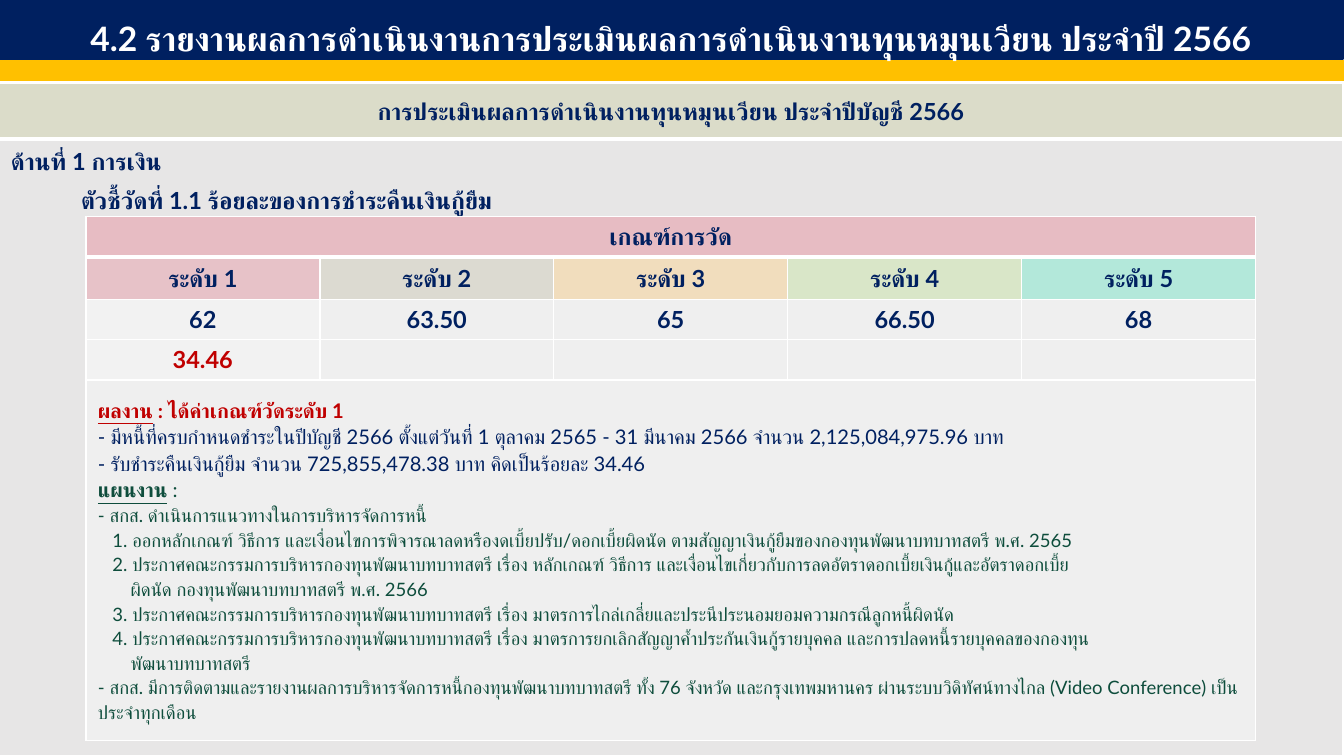
from dataclasses import dataclass

from lxml.etree import SubElement
from pptx import Presentation
from pptx.dml.color import RGBColor
from pptx.enum.shapes import MSO_SHAPE
from pptx.enum.text import MSO_ANCHOR, PP_ALIGN
from pptx.oxml.ns import qn
from pptx.util import Inches, Pt


@dataclass(frozen=True)
class Theme:
    font: str = "Lato"
    navy: str = "002060"
    gold: str = "FFC000"
    white: str = "FFFFFF"
    red: str = "C00000"
    green: str = "0E4D3C"
    sage: str = "DBDCC9"
    gray: str = "E7E6E6"
    pale: str = "F2F2F2"
    pink: str = "E8ABB5"
    levels: tuple = ("E8ABB5", "D6D2C4", "F9D8A3", "D1E6B5", "91EAD2")
    title: int = 20
    head: int = 14
    body: int = 12
    small: int = 11


THEME = Theme()


@dataclass
class Line:
    """A paragraph; lead is an underlined opening, indent is in inches."""
    text: str
    lead: str = ""
    size: int = THEME.head
    color: str = THEME.navy
    bold: bool = True
    center: bool = False
    spacing: float = 1.0
    after: int = 0
    indent: float = 0


def plan(text, indent=0):
    return Line(text, size=THEME.small, color=THEME.green, bold=False,
                spacing=1.1, indent=indent)


STEP, WRAP = 0.12, 0.27

TITLE = Line("4.2 รายงานผลการดำเนินงานการประเมินผลการดำเนินงานทุนหมุนเวียน ประจำปี 2566",
             size=THEME.title, color=THEME.white, center=True, spacing=1.5)
BANNER = Line("การประเมินผลการดำเนินงานทุนหมุนเวียน ประจำปีบัญชี 2566", center=True)
TOPIC = [
    Line("ด้านที่ 1 การเงิน", after=6),
    Line("ตัวชี้วัดที่ 1.1 ร้อยละของการชำระคืนเงินกู้ยืม", indent=0.58),
]
SCORES = ("62", "63.50", "65", "66.50", "68")
RESULT = ("34.46", "", "", "", "")
DETAIL = [
    Line(" : ได้ค่าเกณฑ์วัดระดับ 1", "ผลงาน", THEME.body, THEME.red, spacing=1.5),
    Line("- มีหนี้ที่ครบกำหนดชำระในปีบัญชี 2566 ตั้งแต่วันที่ 1 ตุลาคม 2565 - 31 มีนาคม 2566 "
         "จำนวน 2,125,084,975.96 บาท", size=THEME.body, bold=False, spacing=1.1),
    Line("- รับชำระคืนเงินกู้ยืม จำนวน 725,855,478.38 บาท คิดเป็นร้อยละ 34.46",
         size=THEME.body, bold=False, spacing=1.1),
    Line(" :", "แผนงาน", THEME.body, THEME.green, bold=False, spacing=1.1),
    plan("- สกส. ดำเนินการแนวทางในการบริหารจัดการหนี้"),
    plan("1. ออกหลักเกณฑ์ วิธีการ และเงื่อนไขการพิจารณาลดหรืองดเบี้ยปรับ/ดอกเบี้ยผิดนัด "
         "ตามสัญญาเงินกู้ยืมของกองทุนพัฒนาบทบาทสตรี พ.ศ. 2565", STEP),
    plan("2. ประกาศคณะกรรมการบริหารกองทุนพัฒนาบทบาทสตรี เรื่อง หลักเกณฑ์ วิธีการ "
         "และเงื่อนไขเกี่ยวกับการลดอัตราดอกเบี้ยเงินกู้และอัตราดอกเบี้ย", STEP),
    plan("ผิดนัด กองทุนพัฒนาบทบาทสตรี พ.ศ. 2566", WRAP),
    plan("3. ประกาศคณะกรรมการบริหารกองทุนพัฒนาบทบาทสตรี เรื่อง "
         "มาตรการไกล่เกลี่ยและประนีประนอมยอมความกรณีลูกหนี้ผิดนัด", STEP),
    plan("4. ประกาศคณะกรรมการบริหารกองทุนพัฒนาบทบาทสตรี เรื่อง "
         "มาตรการยกเลิกสัญญาค้ำประกันเงินกู้รายบุคคล และการปลดหนี้รายบุคคลของกองทุน", STEP),
    plan("พัฒนาบทบาทสตรี", WRAP),
    plan("- สกส. มีการติดตามและรายงานผลการบริหารจัดการหนี้กองทุนพัฒนาบทบาทสตรี ทั้ง 76 จังหวัด "
         "และกรุงเทพมหานคร ผ่านระบบวิดิทัศน์ทางไกล (Video Conference) เป็นประจำทุกเดือน"),
]


def write(frame, lines):
    for i, line in enumerate(lines):
        para = frame.add_paragraph() if i else frame.paragraphs[0]
        para.alignment = PP_ALIGN.CENTER if line.center else PP_ALIGN.LEFT
        para.line_spacing = line.spacing
        para.space_after = Pt(line.after)
        props = para._p.get_or_add_pPr()
        props.set("marL", str(Inches(line.indent)))
        font = para.font
        font.size = Pt(line.size)
        font.bold = line.bold
        font.color.rgb = RGBColor.from_string(line.color)
        font.name = THEME.font
        SubElement(props.find(qn("a:defRPr")), qn("a:cs"), typeface=THEME.font)
        if line.lead:
            lead = para.add_run()
            lead.text = line.lead
            lead.font.bold = lead.font.underline = True
        if line.text:
            para.add_run().text = line.text
        else:
            SubElement(para._p, qn("a:endParaRPr"), sz=str(line.size * 100))


def bar(slide, left, top, height, color):
    shape = slide.shapes.add_shape(MSO_SHAPE.RECTANGLE, Inches(left), Inches(top),
                                   Inches(11.11), Inches(height))
    shape.shadow.inherit = False
    shape.fill.solid()
    shape.fill.fore_color.rgb = shape.line.color.rgb = RGBColor.from_string(color)
    shape.line.width = Pt(1)
    return shape


def grid(slide, left, top, width, heights, count):
    frame = slide.shapes.add_table(len(heights), count, Inches(left), Inches(top),
                                   Inches(width), Inches(sum(heights)))
    table = frame.table
    table.first_row = table.horz_banding = False
    for row, height in zip(table.rows, heights):
        row.height = Inches(height)
    for column in table.columns:
        column.width = Inches(width / count)
    return table


def paint(cell, color, alpha=100, above=1, below=1):
    """Fill a cell and rule its edges; above and below are widths in points."""
    props = cell._tc.get_or_add_tcPr()
    for side, width in zip("LRTB", (1, 1, above, below)):
        edge = SubElement(props, qn(f"a:ln{side}"), w=str(Pt(width)))
        fill = SubElement(edge, qn("a:solidFill"))
        SubElement(fill, qn("a:srgbClr"), val=THEME.white)
    cell.fill.solid()
    cell.fill.fore_color.rgb = RGBColor.from_string(color)
    if alpha < 100:
        tint = props.find(qn("a:solidFill"))[0]
        SubElement(tint, qn("a:alpha"), val=str(alpha * 1000))


def panel(slide):
    table = grid(slide, -0.01, 0.69, 11.11, (0.46, 5.1), 1)
    head, body = table.cell(0, 0), table.cell(1, 0)
    paint(head, THEME.sage, below=3)
    paint(body, THEME.gray, above=3)
    head.vertical_anchor = MSO_ANCHOR.MIDDLE
    for cell, lines in ((head, [BANNER]), (body, TOPIC)):
        cell.margin_top = cell.margin_bottom = Inches(0.07)
        write(cell.text_frame, lines)


def criteria(slide):
    count = len(THEME.levels)
    table = grid(slide, 0.71, 1.79, 9.67, (0.32, 0.35, 0.32, 0.32, 2.98), count)
    for row in (0, 4):
        table.cell(row, 0).merge(table.cell(row, count - 1))
    for col, level in enumerate(THEME.levels):
        shade = 80 if col else 100
        paint(table.cell(0, col), THEME.pink, 70, below=3)
        paint(table.cell(1, col), level, 60, above=3)
        paint(table.cell(2, col), THEME.pale, shade)
        paint(table.cell(3, col), THEME.pale, shade)
        paint(table.cell(4, col), THEME.pale, 80)
        table.cell(1, col).vertical_anchor = MSO_ANCHOR.MIDDLE
        texts = (f"ระดับ {col + 1}", SCORES[col], RESULT[col])
        for row, text in enumerate(texts, 1):
            color = THEME.red if row == 3 else THEME.navy
            write(table.cell(row, col).text_frame, [Line(text, color=color, center=True)])
    write(table.cell(0, 0).text_frame, [Line("เกณฑ์การวัด", center=True)])
    write(table.cell(4, 0).text_frame, DETAIL)


def main():
    deck = Presentation()
    deck.slide_width, deck.slide_height = Inches(11.11), Inches(6.25)
    slide = deck.slides.add_slide(deck.slide_layouts[6])
    bar(slide, 0, 0.5, 0.16, THEME.gold)
    panel(slide)
    title = bar(slide, -0.01, -0.02, 0.51, THEME.navy).text_frame
    title.word_wrap = True
    title.vertical_anchor = MSO_ANCHOR.MIDDLE
    write(title, [TITLE])
    criteria(slide)
    deck.save("out.pptx")


if __name__ == "__main__":
    main()
